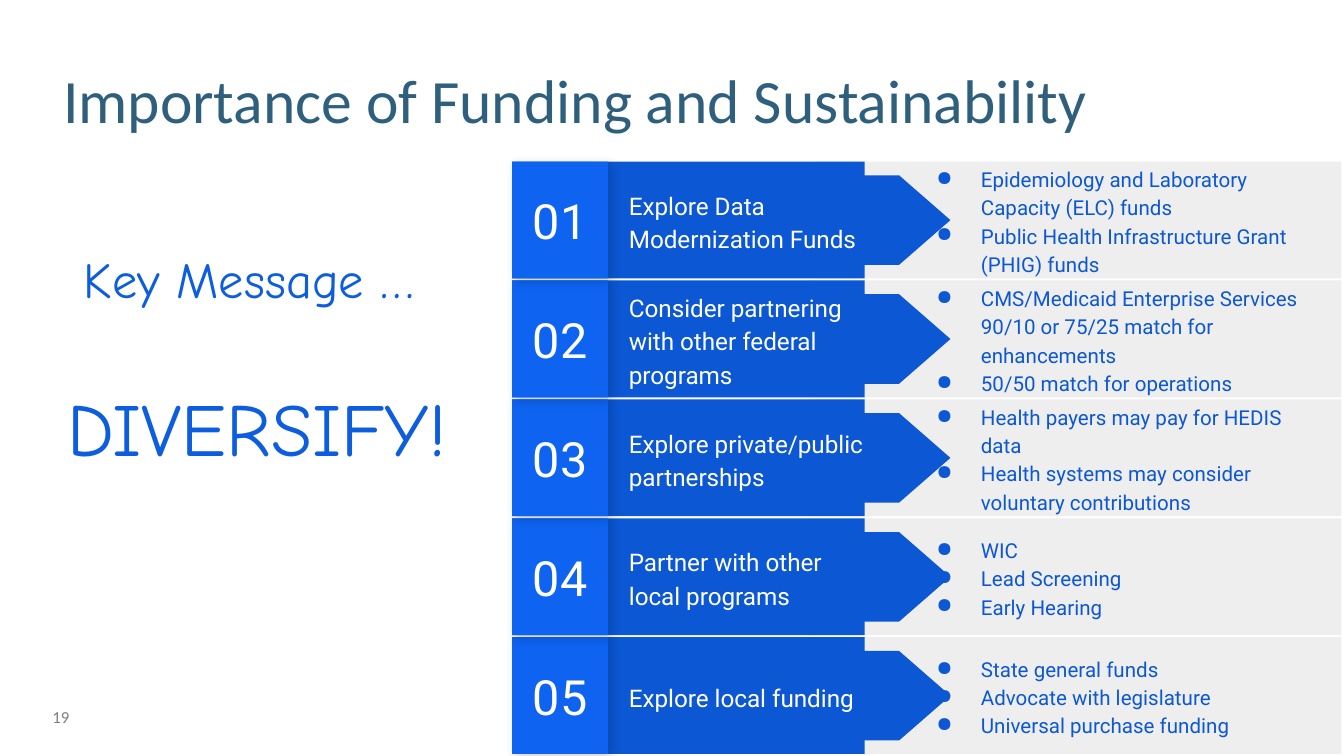
import dataclasses

import lxml.etree
import pptx
import pptx.dml.color
import pptx.enum.shapes
import pptx.enum.text
import pptx.oxml.ns
import pptx.util

Pt = pptx.util.Pt
Shape = pptx.enum.shapes.MSO_SHAPE
Align = pptx.enum.text.PP_ALIGN
Anchor = pptx.enum.text.MSO_ANCHOR
qn = pptx.oxml.ns.qn


@dataclasses.dataclass(frozen=True)
class Theme:
    white: str = "FFFFFF"
    title: str = "2E5F7D"
    message: str = "0D5DDF"
    band: str = "EEEEEE"
    arrow: str = "0C57D3"
    number: str = "0E63F0"
    number_back: str = "0D5CDF"
    page: str = "7F7F7F"
    heading_font: str = "Calibri"
    message_font: str = "Comic Neue"
    body_font: str = "Roboto"
    title_size: float = 33
    lead_size: float = 27
    shout_size: float = 40
    number_size: float = 26
    topic_size: float = 13
    detail_size: float = 11
    page_size: float = 9


THEME = Theme()

ROWS = [
    ("Explore Data Modernization Funds",
     ["Epidemiology and Laboratory Capacity (ELC) funds",
      "Public Health Infrastructure Grant (PHIG) funds"]),
    ("Consider partnering with other federal programs",
     ["CMS/Medicaid Enterprise Services 90/10 or 75/25 match for enhancements",
      "50/50 match for operations"]),
    ("Explore private/public partnerships",
     ["Health payers may pay for HEDIS data",
      "Health systems may consider voluntary contributions"]),
    ("Partner with other local programs",
     ["WIC", "Lead Screening", "Early Hearing"]),
    ("Explore local funding",
     ["State general funds", "Advocate with legislature",
      "Universal purchase funding"]),
]


def points(box):
    return [Pt(value) for value in box]


def set_frame(shape, anchor=Anchor.TOP, inset=(7.2, 7.2)):
    side, edge = points(inset)
    settings = {"word_wrap": True, "vertical_anchor": anchor,
                "auto_size": pptx.enum.text.MSO_AUTO_SIZE.NONE,
                "margin_left": side, "margin_right": side,
                "margin_top": edge, "margin_bottom": edge}
    for name, value in settings.items():
        setattr(shape.text_frame, name, value)
    return shape.text_frame


def write(paragraph, text, size, font, color, **formats):
    for name, value in formats.items():
        setattr(paragraph, name, value)
    run = paragraph.add_run()
    run.text = text
    for name, value in {"size": Pt(size), "name": font}.items():
        setattr(run.font, name, value)
    run.font.color.rgb = pptx.dml.color.RGBColor.from_string(color)


def add_bullet(paragraph, color):
    properties = paragraph._p.get_or_add_pPr()
    properties.set("marL", str(Pt(36)))
    properties.set("indent", str(Pt(-23.8)))
    bullet_color = lxml.etree.SubElement(properties, qn("a:buClr"))
    lxml.etree.SubElement(bullet_color, qn("a:srgbClr"), val=color)
    lxml.etree.SubElement(properties, qn("a:buChar"), char="●")


def add_block(shapes, kind, box, color):
    shape = shapes.add_shape(kind, *points(box))
    shape.shadow.inherit = False
    shape.fill.solid()
    shape.fill.fore_color.rgb = pptx.dml.color.RGBColor.from_string(color)
    shape.line.fill.background()
    return shape


def add_soft_shadow(shape):
    effects = shape._element.spPr.find(qn("a:effectLst"))
    shadow = lxml.etree.SubElement(
        effects, qn("a:outerShdw"), blurRad=str(Pt(5.6)), dist=str(Pt(2.2)),
        dir=str(45 * 60000), algn="bl", rotWithShape="0")
    color = lxml.etree.SubElement(shadow, qn("a:srgbClr"), val="000000")
    lxml.etree.SubElement(color, qn("a:alpha"), val="17000")


def place_title(slide, box):
    title = slide.shapes.title
    title.left, title.top, title.width, title.height = points(box)
    frame = set_frame(title, Anchor.MIDDLE, (5, 2.9))
    write(frame.paragraphs[0], "Importance of Funding and Sustainability",
          THEME.title_size, THEME.heading_font, THEME.title,
          alignment=Align.LEFT, line_spacing=0.9)


def place_message(slide, box):
    frame = set_frame(slide.shapes.add_textbox(*points(box)), inset=(5, 2.9))
    formats = {"alignment": Align.CENTER, "line_spacing": 0.9}
    write(frame.paragraphs[0], "Key Message … ", THEME.lead_size,
          THEME.message_font, THEME.message, **formats)
    write(frame.add_paragraph(), "DIVERSIFY!", THEME.shout_size,
          THEME.message_font, THEME.message, space_before=Pt(44), **formats)


def place_page_number(slide, box):
    frame = set_frame(slide.shapes.add_textbox(*points(box)), inset=(0, 2.9))
    write(frame.paragraphs[0], "19", THEME.page_size, THEME.heading_font,
          THEME.page)


def place_row(slide, box, number, topic, details):
    left, top, width, height = box
    middle = top + height / 2
    shapes = slide.shapes.add_group_shape().shapes

    # Grey band and the blue arrow on it
    add_block(shapes, Shape.RECTANGLE,
              (left + 159, top, width - 159, height), THEME.band)
    add_block(shapes, Shape.RECTANGLE,
              (left + 51.3, top, 137.5, height), THEME.arrow)
    breadth, length, center = 48, 137.5, left + 166
    arrow = add_block(shapes, Shape.FLOWCHART_OFFPAGE_CONNECTOR,
                      (center - breadth / 2, middle - length / 2,
                       breadth, length), THEME.arrow)
    arrow.rotation = 270

    # Topic
    frame = set_frame(shapes.add_textbox(
        *points((left + 55.4, middle - 24, 144.7, 48))), Anchor.MIDDLE)
    write(frame.paragraphs[0], topic, THEME.topic_size, THEME.body_font,
          THEME.white, line_spacing=1.15)

    # Number tile over its shadow
    tile = (left, top, 51.3, height)
    add_soft_shadow(add_block(shapes, Shape.RECTANGLE, tile,
                              THEME.number_back))
    frame = set_frame(add_block(shapes, Shape.RECTANGLE, tile, THEME.number),
                      Anchor.MIDDLE)
    write(frame.paragraphs[0], f"{number:02d}", THEME.number_size,
          THEME.body_font, THEME.white, alignment=Align.CENTER)

    # Details
    frame = set_frame(shapes.add_textbox(
        *points((left + 208, top, 221.8, height))), Anchor.MIDDLE)
    for index, detail in enumerate(details):
        paragraph = frame.add_paragraph() if index else frame.paragraphs[0]
        add_bullet(paragraph, THEME.arrow)
        write(paragraph, detail, THEME.detail_size, THEME.body_font,
              THEME.arrow, line_spacing=1.15)


def place_rows(slide, box, gap=1.1):
    left, top, width, height = box
    row_height = (height - gap * (len(ROWS) - 1)) / len(ROWS)
    # The last row lies at the back
    for index, (topic, details) in reversed(list(enumerate(ROWS))):
        row_top = top + index * (row_height + gap)
        place_row(slide, (left, row_top, width, row_height),
                  index + 1, topic, details)


def main():
    presentation = pptx.Presentation()
    presentation.slide_width, presentation.slide_height = Pt(720), Pt(405)
    slide = presentation.slides.add_slide(presentation.slide_layouts[5])
    place_page_number(slide, (28.1, 375.8, 31.7, 16.6))
    place_title(slide, (28.8, 31.7, 666.7, 47.5))
    place_message(slide, (17.3, 133.9, 241.2, 221.8))
    place_rows(slide, (274.4, 86.6, 444.2, 317.4))
    presentation.save("out.pptx")


if __name__ == "__main__":
    main()
